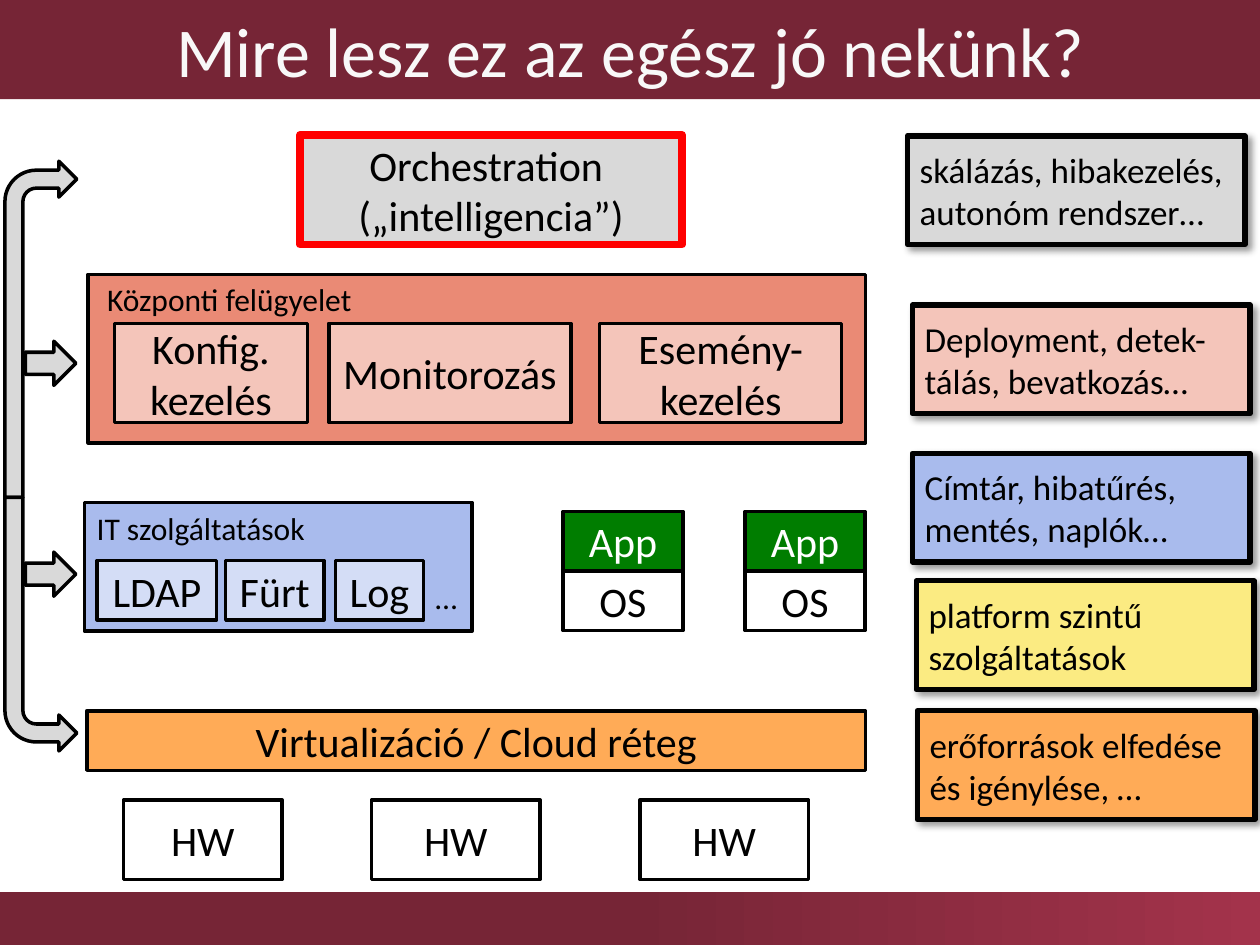
from dataclasses import dataclass

from lxml.etree import SubElement
from pptx import Presentation
from pptx.dml.color import RGBColor
from pptx.enum.shapes import MSO_SHAPE as Preset
from pptx.enum.text import MSO_ANCHOR as Anchor, MSO_AUTO_SIZE as AutoSize, PP_ALIGN as Align
from pptx.oxml.ns import qn
from pptx.util import Cm, Pt


@dataclass(frozen=True)
class Theme:
    """Colours, font and type sizes of the slide."""
    font: str = "Calibri"
    black: str = "000000"
    white: str = "FFFFFF"
    title_text: str = "F8F8F8"
    wine: str = "762536"
    wine_light: str = "A3334B"
    grey: str = "D9D9D9"
    red: str = "FF0000"
    coral: str = "EA8A75"
    coral_light: str = "F4C5BA"
    blue: str = "A9BBED"
    blue_light: str = "D4DDF6"
    green: str = "007D00"
    orange: str = "FFAB57"
    yellow: str = "FBEB82"
    title_size: int = 40
    block_size: int = 24
    note_size: int = 20
    label_size: int = 18


@dataclass(frozen=True)
class Box:
    """A rectangle in centimetres."""
    left: float
    top: float
    width: float
    height: float

    def inner(self, left, top, width, height):
        """Return a box placed relative to this one."""
        return Box(self.left + left, self.top + top, width, height)

    def lengths(self):
        """Return left, top, width and height as lengths."""
        return [Cm(value) for value in (self.left, self.top, self.width, self.height)]


THEME = Theme()


def rgb(color):
    """Turn a hex string into a colour."""
    return RGBColor.from_string(color)


def write_text(shape, text, size=THEME.block_size, color=THEME.black,
               align=Align.CENTER, anchor=Anchor.MIDDLE):
    """Write one formatted paragraph into a shape."""
    frame = shape.text_frame
    frame.word_wrap = True
    frame.vertical_anchor = anchor
    paragraph = frame.paragraphs[0]
    paragraph.text = text
    paragraph.alignment = align
    for run in paragraph.runs:
        run.font.name = THEME.font
        run.font.size = Pt(size)
        run.font.color.rgb = rgb(color)


def add_block(slide, box, fill=None, text=None, preset=Preset.RECTANGLE,
              line=THEME.black, line_width=2, **text_format):
    """Add an outlined shape, with text if there is any."""
    shape = slide.shapes.add_shape(preset, *box.lengths())
    shape.shadow.inherit = False
    if fill:
        shape.fill.solid()
        shape.fill.fore_color.rgb = rgb(fill)
    else:
        shape.fill.background()
    shape.line.color.rgb = rgb(line)
    shape.line.width = Pt(line_width)
    if text:
        write_text(shape, text, **text_format)
    return shape


def add_label(slide, box, text):
    """Add a small plain label."""
    label = slide.shapes.add_textbox(*box.lengths())
    write_text(label, text, size=THEME.label_size, align=Align.LEFT, anchor=Anchor.TOP)
    label.text_frame.auto_size = AutoSize.SHAPE_TO_FIT_TEXT


def add_shadow(shape):
    """Give a shape a soft shadow to the lower right."""
    effects = shape._element.spPr.find(qn("a:effectLst"))
    shadow = SubElement(effects, qn("a:outerShdw"), blurRad=str(Pt(4)), dist=str(Pt(3)),
                        dir="2700000", algn="tl", rotWithShape="0")
    color = SubElement(shadow, qn("a:srgbClr"), val=THEME.black)
    SubElement(color, qn("a:alpha"), val="40000")


def add_footer(slide, box):
    """Draw the gradient band at the foot of the slide."""
    band = slide.shapes.add_shape(Preset.RECTANGLE, *box.lengths())
    band.shadow.inherit = False
    band.line.fill.background()
    band.fill.gradient()
    band.fill.gradient_angle = 0
    stops = zip(band.fill.gradient_stops, (0.5, 1), (THEME.wine, THEME.wine_light))
    for stop, position, color in stops:
        stop.position = position
        stop.color.rgb = rgb(color)


def format_title(slide, box, text):
    """Place and format the title placeholder."""
    title = slide.shapes.title
    title.left, title.top, title.width, title.height = box.lengths()
    title.fill.solid()
    title.fill.fore_color.rgb = rgb(THEME.wine)
    write_text(title, text, size=THEME.title_size, color=THEME.title_text)
    title.text_frame.auto_size = AutoSize.NONE


def add_supervision(slide, box):
    """Draw the central supervision panel."""
    add_block(slide, box, THEME.coral)
    add_label(slide, box.inner(0.13, 0, 6.6, 1.02), "Központi felügyelet")
    parts = (("Konfig. kezelés", 0.53, 3.89), ("Monitorozás", 4.85, 4.88),
             ("Esemény-kezelés", 10.31, 4.88))
    for text, left, width in parts:
        add_block(slide, box.inner(left, 0.99, width, 2), THEME.coral_light, text)


def add_services(slide, box):
    """Draw the IT services panel."""
    add_block(slide, box, THEME.blue)
    add_label(slide, box.inner(0, 0, 5.23, 1.02), "IT szolgáltatások")
    for text, left, width in (("LDAP", 0.26, 2.41), ("Fürt", 2.85, 1.98), ("Log", 5.06, 1.78)):
        add_block(slide, box.inner(left, 1.17, width, 1.2), THEME.blue_light, text)
    add_label(slide, box.inner(6.83, 1.4, 0.99, 1.02), "…")


def add_machine(slide, box):
    """Draw an application on top of its operating system."""
    half = box.height / 2
    add_block(slide, box.inner(0, half, box.width, half), text="OS")
    add_block(slide, box.inner(0, 0, box.width, half), THEME.green, "App", color=THEME.white)


def add_infrastructure(slide, box):
    """Draw the cloud layer and the hardware below it."""
    add_block(slide, box.inner(0, 0, box.width, 1.2), THEME.orange,
              "Virtualizáció / Cloud réteg")
    for left, width in ((0.74, 3.2), (5.74, 3.4), (11.15, 3.4)):
        add_block(slide, box.inner(left, 1.8, width, 1.6), THEME.white, "HW")


def add_control_arrows(slide, box):
    """Draw the arrows that link the layers along the left edge."""
    middle = 6.78
    add_block(slide, box.inner(0, 0, box.width, middle), THEME.grey, preset=Preset.BENT_ARROW)
    lower = add_block(slide, box.inner(0, middle, box.width, box.height - middle),
                      THEME.grey, preset=Preset.BENT_ARROW)
    lower._element.spPr.xfrm.set("flipV", "1")
    for top in (7.88, 3.63):
        add_block(slide, box.inner(0.41, top, 1.02, 0.89), THEME.grey,
                  preset=Preset.RIGHT_ARROW)


def add_notes_column(slide, box):
    """Draw the shadowed remarks beside the layers."""
    remarks = (
        (0.2, 11.59, THEME.orange, "erőforrások elfedése és igénylése, …"),
        (0.18, 8.97, THEME.yellow, "platform szintű\nszolgáltatások"),
        (0.1, 6.4, THEME.blue, "Címtár, hibatűrés, mentés, naplók…"),
        (0.1, 3.41, THEME.coral_light, "Deployment, detek-tálás, bevatkozás…"),
        (0, 0, THEME.grey, "skálázás, hibakezelés, \nautonóm rendszer…"),
    )
    for left, top, fill, text in remarks:
        remark = add_block(slide, box.inner(left, top, 6.81, 2.19), fill, text, line_width=3,
                           size=THEME.note_size, align=Align.LEFT)
        add_shadow(remark)


def main():
    """Build the slide and save it."""
    presentation = Presentation()
    presentation.slide_width, presentation.slide_height = Cm(25.4), Cm(19.05)
    slide = presentation.slides.add_slide(presentation.slide_layouts[5])
    add_footer(slide, Box(0, 17.99, 25.4, 1.06))
    format_title(slide, Box(0, 0, 25.4, 2), "Mire lesz ez az egész jó nekünk?")
    add_block(slide, Box(6.05, 2.72, 7.7, 2.21), THEME.grey,
              "Orchestration \n(„intelligencia”)", line=THEME.red, line_width=4.5)
    add_supervision(slide, Box(1.78, 5.53, 15.67, 3.4))
    add_services(slide, Box(1.7, 10.13, 7.82, 2.59))
    for left in (11.35, 15.02):
        add_machine(slide, Box(left, 10.31, 2.42, 2.4))
    add_infrastructure(slide, Box(1.75, 14.33, 15.7, 3.4))
    add_control_arrows(slide, Box(0.1, 3.25, 1.45, 11.89))
    add_notes_column(slide, Box(18.29, 2.74, 7.01, 13.78))
    presentation.save("out.pptx")


if __name__ == "__main__":
    main()
